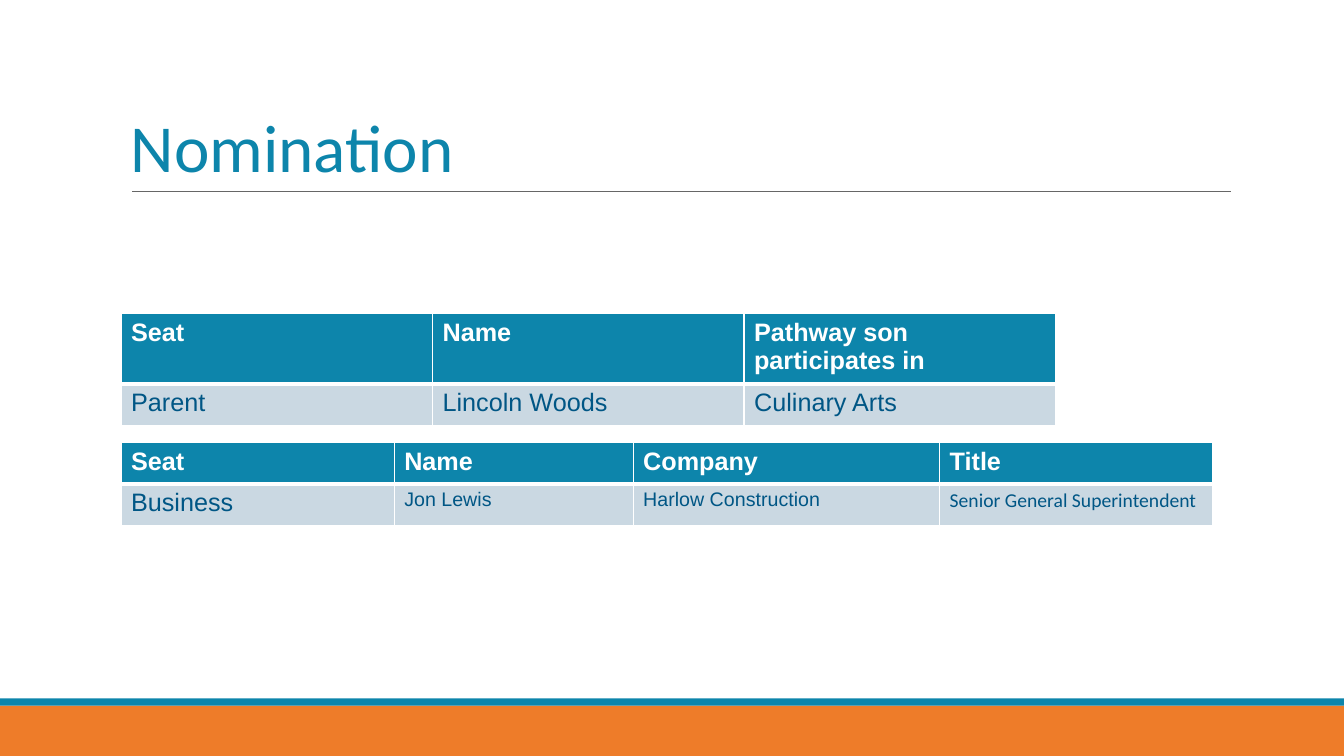
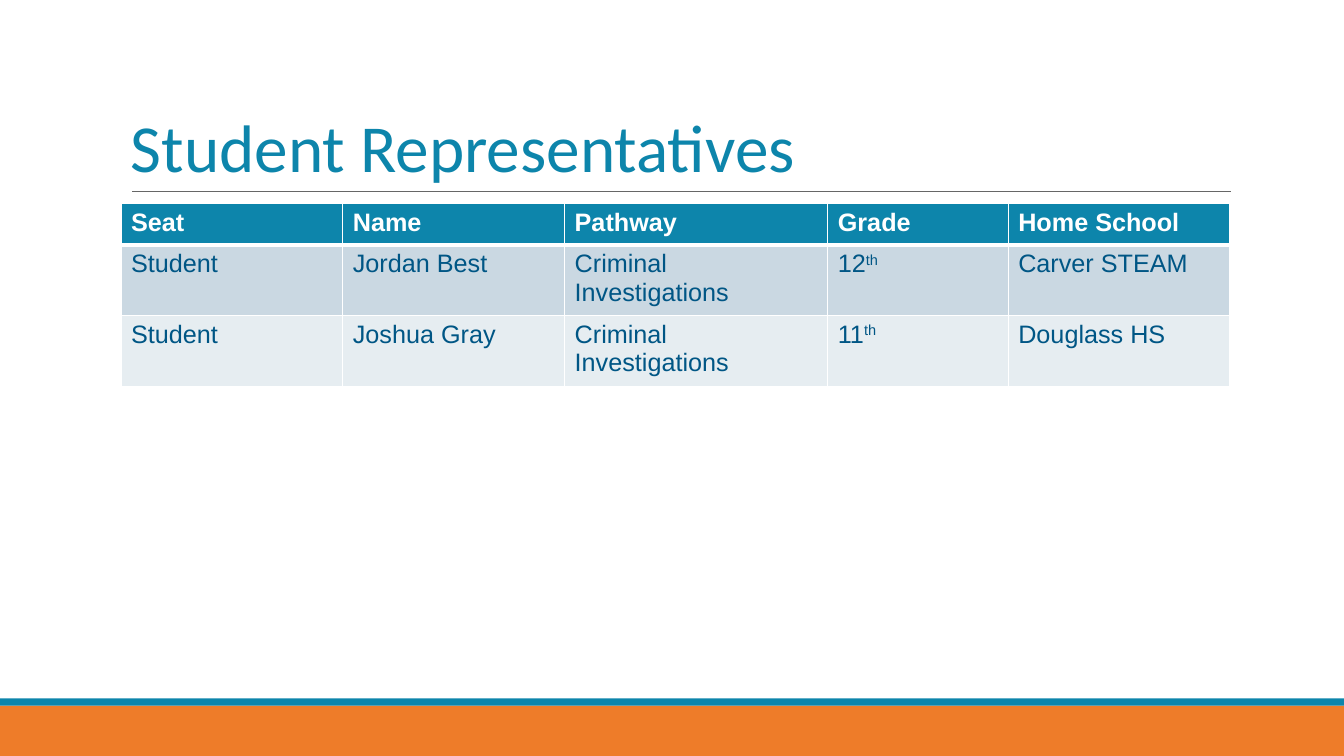
from dataclasses import dataclass

import pptx
import pptx.dml.color
import pptx.enum.shapes
import pptx.enum.text
import pptx.oxml
import pptx.oxml.ns
import pptx.presentation
import pptx.shapes.autoshape
import pptx.slide
import pptx.table
import pptx.text.text
import pptx.util

Inches = pptx.util.Inches
Pt = pptx.util.Pt


@dataclass(frozen=True)
class Theme:
    teal: str = "0D85AB"
    orange: str = "EE7C29"
    navy: str = "005685"
    white: str = "FFFFFF"
    rule: str = "666666"
    bands: tuple[str, str] = ("CAD8E2", "E6EDF1")
    head: str = "Calibri"
    body: str = "Arial"
    title: int = 48
    text: int = 18
    small: int = 14


THEME = Theme()


@dataclass(frozen=True)
class Cell:
    text: str
    size: int = THEME.text
    font: str = THEME.body
    sup: str = ""


@dataclass(frozen=True)
class Grid:
    top: float
    cols: tuple[float, ...]
    heights: tuple[float, ...]
    rows: tuple[tuple[Cell, ...], ...]


@dataclass(frozen=True)
class Page:
    title: str
    grids: tuple[Grid, ...]


def cells(*texts: str) -> tuple[Cell, ...]:
    return tuple(Cell(text) for text in texts)


def pupil(name: str, grade: str, school: str) -> tuple[Cell, ...]:
    start = cells("Student", name, "Criminal Investigations")
    return (*start, Cell(grade, sup="th"), Cell(school))


LEFT = 1.2
WIDE = 13.33
PAGES = (
    Page("Nomination", (
        Grid(3.11, (3.09,) * 3, (0.65, 0.41), (
            cells("Seat", "Name", "Pathway son participates in"),
            cells("Parent", "Lincoln Woods", "Culinary Arts"),
        )),
        Grid(4.39, (2.71, 2.37, 3.04, 2.71), (0.41, 0.41), (
            cells("Seat", "Name", "Company", "Title"),
            (Cell("Business"),
             Cell("Jon Lewis", THEME.small),
             Cell("Harlow Construction", THEME.small),
             Cell("Senior General Superintendent", THEME.small, THEME.head)),
        )),
    )),
    Page("Student Representatives", (
        Grid(2.02, (2.2, 2.2, 2.61, 1.79, 2.2), (0.41, 0.66, 0.66), (
            cells("Seat", "Name", "Pathway", "Grade", "Home School"),
            pupil("Jordan Best", "12", "Carver STEAM"),
            pupil("Joshua Gray", "11", "Douglass HS"),
        )),
    )),
)


def rgb(code: str) -> pptx.dml.color.RGBColor:
    return pptx.dml.color.RGBColor.from_string(code)


def write(par: pptx.text.text._Paragraph, text: str, color: str,
          **style: object) -> pptx.text.text._Run:
    run = par.add_run()
    run.text = text
    run.font.color.rgb = rgb(color)
    for key, value in style.items():
        setattr(run.font, key, value)
    return run


def band(slide: pptx.slide.Slide, top: float, high: float, color: str) -> None:
    shape = slide.shapes.add_shape(
        pptx.enum.shapes.MSO_SHAPE.RECTANGLE,
        0, Inches(top), Inches(WIDE), Inches(high))
    shape.shadow.inherit = False
    shape.fill.solid()
    shape.fill.fore_color.rgb = rgb(color)
    shape.line.fill.background()


def frame(slide: pptx.slide.Slide, title: str) -> None:
    """Draw the bands, the rule and the title that every slide has."""
    band(slide, 7, 0.5, THEME.orange)
    band(slide, 6.93, 0.07, THEME.teal)
    rule = slide.shapes.add_connector(
        pptx.enum.shapes.MSO_CONNECTOR.STRAIGHT,
        Inches(1.31), Inches(1.9), Inches(12.21), Inches(1.9))
    rule.line.color.rgb = rgb(THEME.rule)
    rule.line.width = Pt(0.75)
    pptx.oxml.ns.qn("a:effectLst")
    rule._element.spPr.append(
        pptx.oxml.parse_xml(f"<a:effectLst {pptx.oxml.ns.nsdecls('a')}/>"))

    box = slide.shapes.add_textbox(
        Inches(LEFT), Inches(0.31), Inches(11), Inches(1.59)).text_frame
    box.word_wrap = True
    box.vertical_anchor = pptx.enum.text.MSO_ANCHOR.BOTTOM
    par = box.paragraphs[0]
    par.line_spacing = 0.85
    write(par, title, THEME.teal, name=THEME.head, size=Pt(THEME.title))


def border(cell: pptx.table._Cell, row: int) -> None:
    """Edge a cell in white, thicker between the header and the body."""
    sides = {"L": 1, "R": 1, "T": 3 if row == 1 else 1,
             "B": 3 if row == 0 else 1}
    props = cell._tc.get_or_add_tcPr()
    for side, width in sides.items():
        props.append(pptx.oxml.parse_xml(
            f'<a:ln{side} {pptx.oxml.ns.nsdecls("a")} w="{Pt(width)}">'
            f'<a:solidFill><a:srgbClr val="{THEME.white}"/></a:solidFill>'
            f'</a:ln{side}>'))


def fill(cell: pptx.table._Cell, item: Cell, row: int) -> None:
    border(cell, row)
    back = THEME.bands[(row - 1) % 2] if row else THEME.teal
    cell.fill.solid()
    cell.fill.fore_color.rgb = rgb(back)
    color = THEME.navy if row else THEME.white
    style = {"name": item.font, "size": Pt(item.size), "bold": row == 0}
    par = cell.text_frame.paragraphs[0]
    write(par, item.text, color, **style)
    if item.sup:
        run = write(par, item.sup, color, **style)
        run._r.get_or_add_rPr().set("baseline", "30000")


def table(slide: pptx.slide.Slide, grid: Grid) -> None:
    tab = slide.shapes.add_table(
        len(grid.rows), len(grid.cols), Inches(LEFT), Inches(grid.top),
        Inches(sum(grid.cols)), Inches(sum(grid.heights))).table
    for col, width in zip(tab.columns, grid.cols):
        col.width = Inches(width)
    for row, (line, high) in enumerate(zip(grid.rows, grid.heights)):
        tab.rows[row].height = Inches(high)
        for col, item in enumerate(line):
            fill(tab.cell(row, col), item, row)


def main() -> None:
    deck = pptx.Presentation()
    deck.slide_width = Inches(WIDE)
    deck.slide_height = Inches(7.5)
    for page in PAGES:
        slide = deck.slides.add_slide(deck.slide_layouts[6])
        frame(slide, page.title)
        for grid in page.grids:
            table(slide, grid)
    deck.save("out.pptx")


if __name__ == "__main__":
    main()
